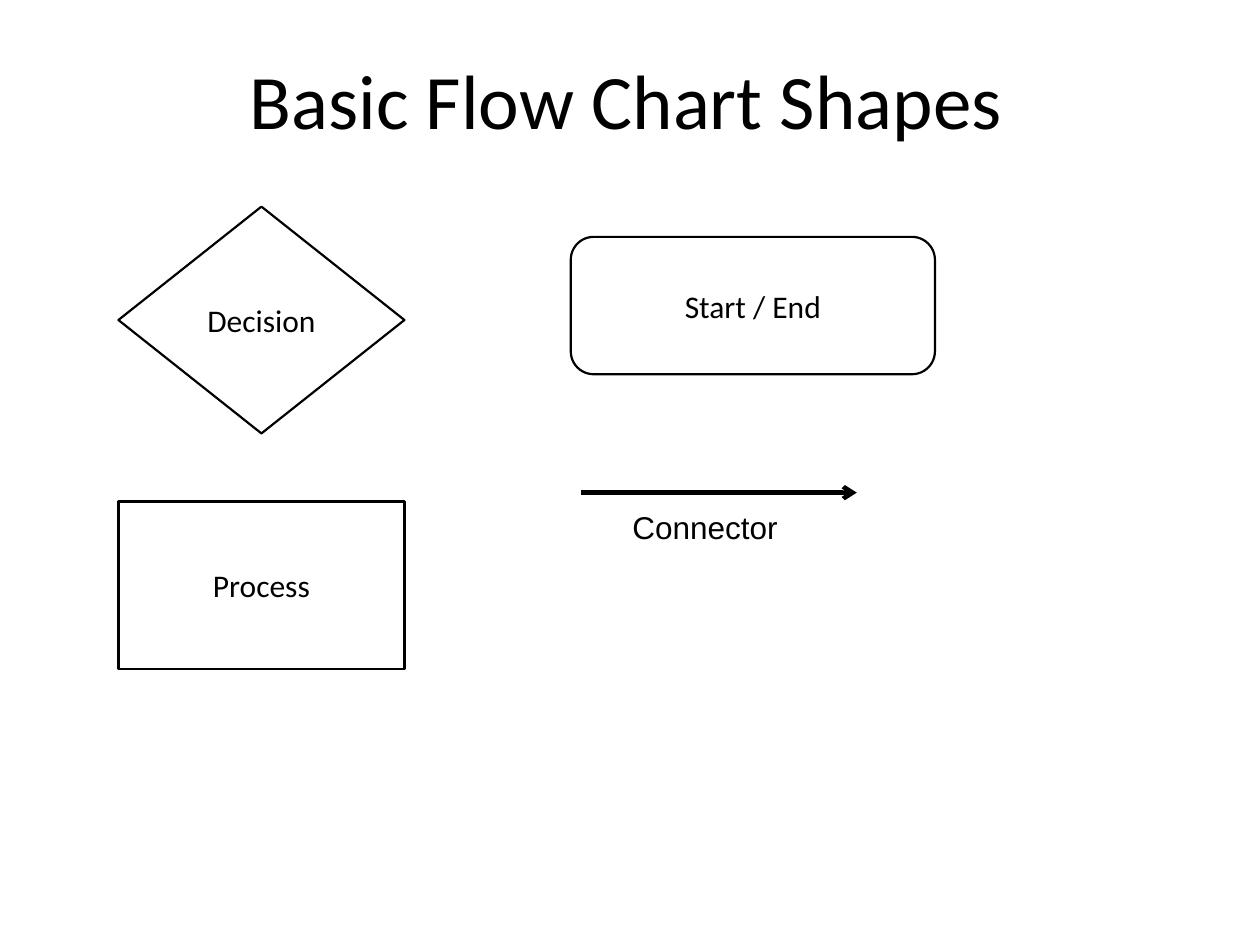
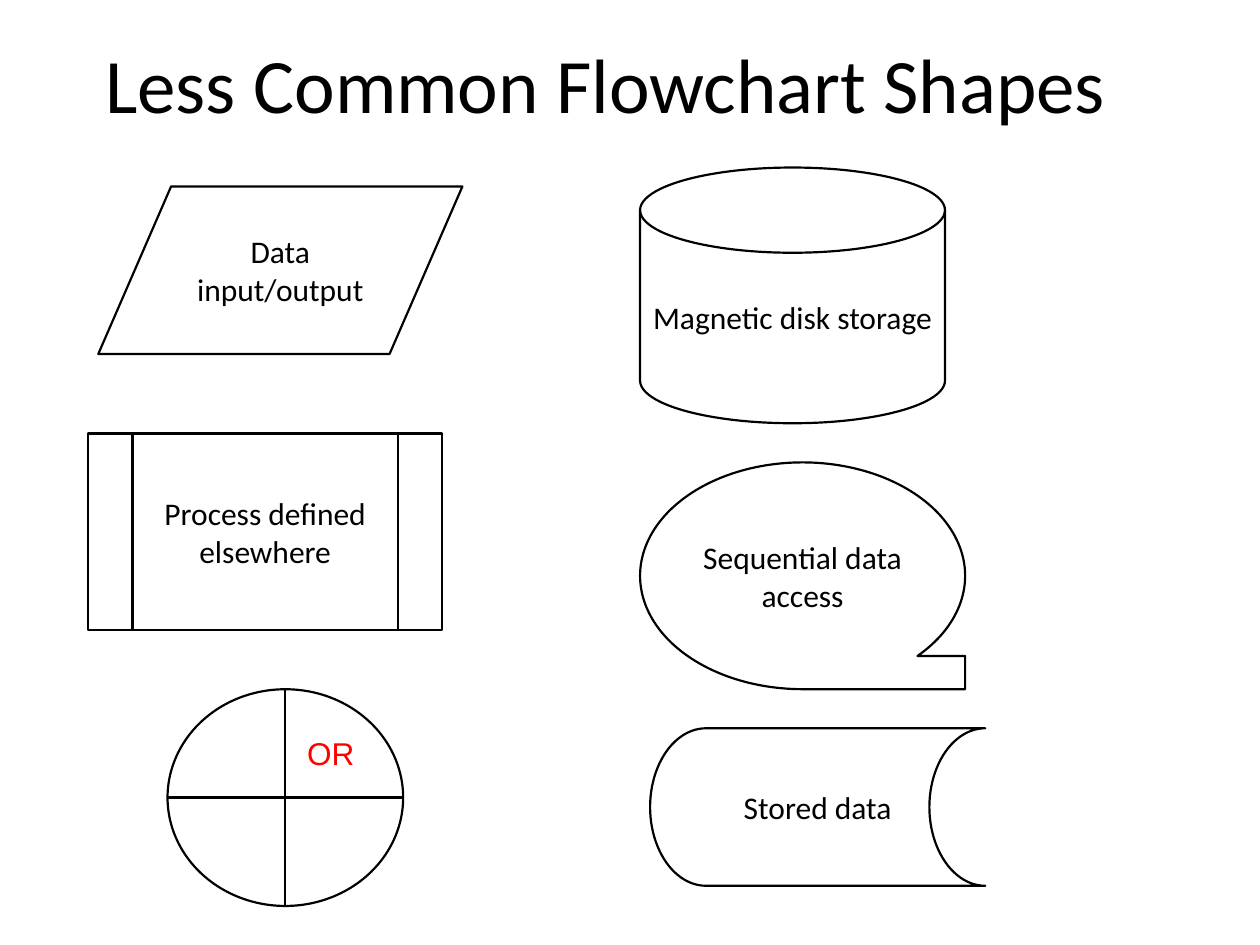
"""Build two slides that name the common and less common flowchart shapes."""
import pptx
import pptx.dml.color
import pptx.enum.shapes
import pptx.enum.text
import pptx.oxml.ns
import pptx.util
from lxml import etree

Inches, Pt = pptx.util.Inches, pptx.util.Pt
KIND = pptx.enum.shapes.MSO_SHAPE
ALIGN = pptx.enum.text.PP_ALIGN
ANCHOR = pptx.enum.text.MSO_ANCHOR
BLACK, RED = "000000", "FF0000"

SLIDES = [
    {
        "title": ("Basic Flow Chart Shapes", (0.47, 0.16, 9, 1.25)),
        "shapes": [
            ("Decision", KIND.FLOWCHART_DECISION, (0.94, 1.64, 2.27, 1.8)),
            ("Process", KIND.FLOWCHART_PROCESS, (0.94, 3.98, 2.27, 1.33)),
            ("Start / End", KIND.FLOWCHART_ALTERNATE_PROCESS, (4.53, 1.88, 2.89, 1.09)),
        ],
        "arrows": [(4.61, 3.91, 6.8, 3.91)],
        "labels": [("Connector", BLACK, (4.92, 3.98, 3.05, 0.4))],
    },
    {
        "title": ("Less Common Flowchart Shapes", (0.31, 0.3, 9, 0.71)),
        "shapes": [
            ("Data input/output", KIND.FLOWCHART_DATA, (0.78, 1.48, 2.89, 1.33)),
            ("Process defined elsewhere", KIND.FLOWCHART_PREDEFINED_PROCESS, (0.7, 3.44, 2.81, 1.56)),
            ("Magnetic disk storage", KIND.FLOWCHART_MAGNETIC_DISK, (5.08, 1.33, 2.42, 2.03)),
            ("Sequential data access", KIND.FLOWCHART_SEQUENTIAL_ACCESS_STORAGE, (5.08, 3.67, 2.58, 1.8)),
            ("", KIND.FLOWCHART_OR, (1.33, 5.47, 1.87, 1.72)),
            ("Stored data", KIND.FLOWCHART_STORED_DATA, (5.16, 5.78, 2.66, 1.25)),
        ],
        "arrows": [],
        "labels": [("OR", RED, (2.34, 5.78, 0.7, 0.4))],
    },
]


def color(code):
    return pptx.dml.color.RGBColor.from_string(code)


def inches(nums):
    return [Inches(num) for num in nums]


def write(shape, text, size=18, font="Calibri", code=BLACK, align=ALIGN.CENTER, anchor=ANCHOR.MIDDLE):
    frame = shape.text_frame
    frame.word_wrap = True
    frame.vertical_anchor = anchor
    para = frame.paragraphs[0]
    para.text = text
    para.alignment = align
    para.font.size = Pt(size)
    para.font.name = font
    para.font.color.rgb = color(code)


def stroke(shape, width):
    shape.line.color.rgb = color(BLACK)
    shape.line.width = Pt(width)


def add_title(slide, text, box):
    write(slide.shapes.add_textbox(*inches(box)), text, size=44)


def add_symbol(slide, text, kind, box):
    shape = slide.shapes.add_shape(kind, *inches(box))
    shape.shadow.inherit = False
    shape.fill.background()
    stroke(shape, 1.25)
    if text:
        write(shape, text)


def add_arrow(slide, ends):
    straight = pptx.enum.shapes.MSO_CONNECTOR.STRAIGHT
    arrow = slide.shapes.add_connector(straight, *inches(ends))
    stroke(arrow, 2.5)
    name = pptx.oxml.ns.qn
    etree.SubElement(arrow.line._get_or_add_ln(), name("a:tailEnd"), type="arrow")
    etree.SubElement(arrow._element.spPr, name("a:effectLst"))


def add_label(slide, text, code, box):
    label = slide.shapes.add_textbox(*inches(box))
    write(label, text, font="Arial", code=code, align=ALIGN.LEFT, anchor=ANCHOR.TOP)


def main():
    deck = pptx.Presentation()
    deck.slide_width, deck.slide_height = inches((10, 7.5))
    for page in SLIDES:
        slide = deck.slides.add_slide(deck.slide_layouts[6])
        add_title(slide, *page["title"])
        for symbol in page["shapes"]:
            add_symbol(slide, *symbol)
        for ends in page["arrows"]:
            add_arrow(slide, ends)
        for label in page["labels"]:
            add_label(slide, *label)
    deck.save("out.pptx")


if __name__ == "__main__":
    main()
